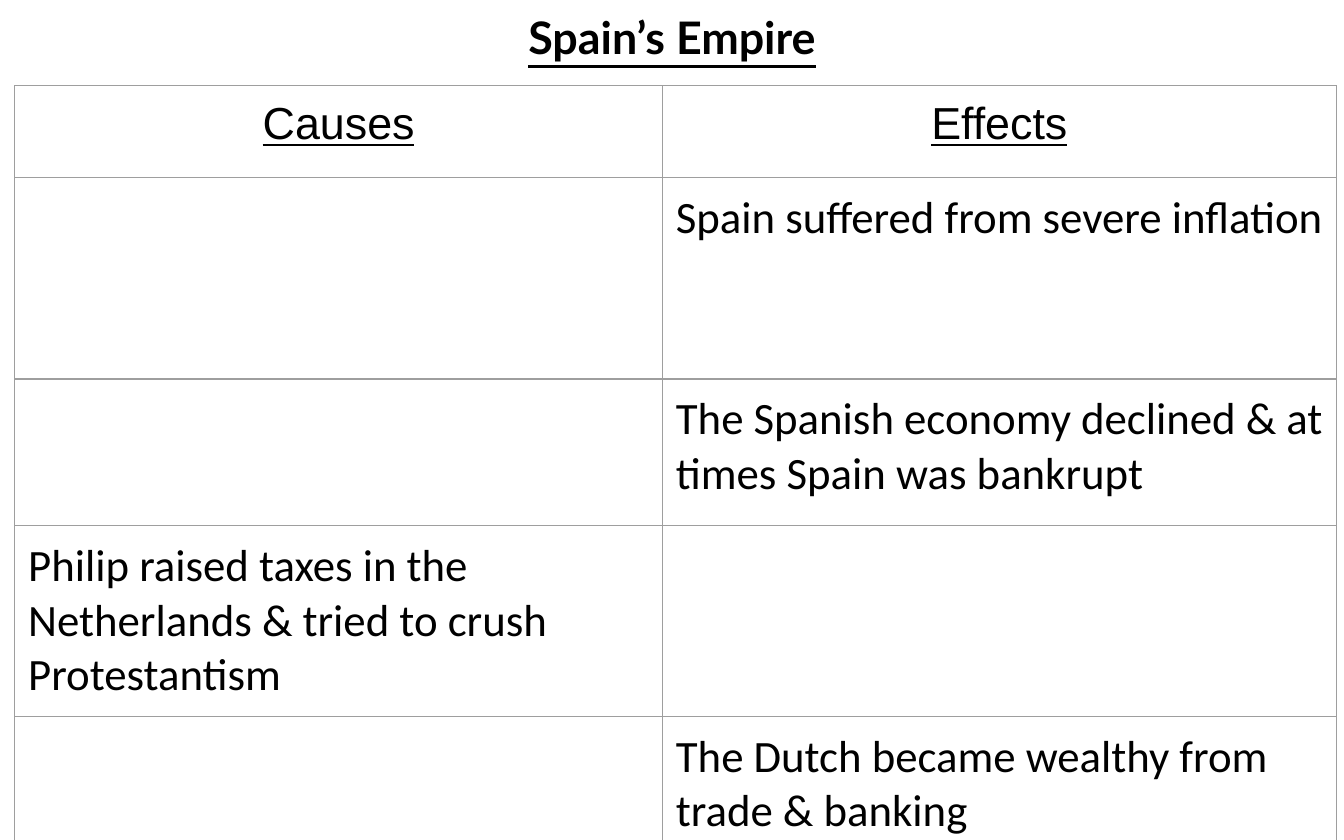
"""Build the cause and effect table slide about Spain's Empire."""
import pptx
import pptx.dml.color
import pptx.enum.text
import pptx.oxml
import pptx.oxml.ns
import pptx.util

Pt = pptx.util.Pt
CENTER = pptx.enum.text.PP_ALIGN.CENTER
LEFT = pptx.enum.text.PP_ALIGN.LEFT

TITLE = "Spain’s Empire"
ROWS = [
    ("Causes", "Effects"),
    ("", "Spain suffered from severe inflation"),
    ("", "The Spanish economy declined & at times Spain was bankrupt"),
    ("Philip raised taxes in the Netherlands & tried to crush Protestantism", ""),
    ("", "The Dutch became wealthy from trade & banking"),
]
COLUMN_WIDTHS = [347, 361]
ROW_HEIGHTS = [49, 108, 78.5, 78.5, 78.5]
TABLE_LEFT, TABLE_TOP = 7.9, 46
SLIDE_WIDTH, SLIDE_HEIGHT = 720, 450
MARGIN = 7.2
TEXT_COLOR = "000000"
BORDER_COLOR = "9E9E9E"
BORDER_WIDTH = 0.75


def rgb(color):
    """Return the colour for a hex string."""
    return pptx.dml.color.RGBColor.from_string(color)


def write(text_frame, text, font_name, alignment, bold=False, underline=False):
    """Fill a text frame with one formatted paragraph."""
    text_frame.text = text
    paragraph = text_frame.paragraphs[0]
    paragraph.alignment = alignment
    for run in paragraph.runs:
        run.font.name = font_name
        run.font.size = Pt(24)
        run.font.bold = bold
        run.font.underline = underline
        run.font.color.rgb = rgb(TEXT_COLOR)


def set_margins(target):
    """Give a cell or text frame equal margins."""
    for side in ("left", "right", "top", "bottom"):
        setattr(target, f"margin_{side}", Pt(MARGIN))


def add_borders(cell):
    """Draw a thin line on all four sides of a cell."""
    properties = cell._tc.get_or_add_tcPr()
    for position, side in enumerate(("lnL", "lnR", "lnT", "lnB")):
        line = pptx.oxml.parse_xml(
            f'<a:{side} {pptx.oxml.ns.nsdecls("a")} w="{Pt(BORDER_WIDTH)}">'
            f'<a:solidFill><a:srgbClr val="{BORDER_COLOR}"/></a:solidFill></a:{side}>'
        )
        properties.insert(position, line)


def add_table(slide):
    """Add the table of causes and effects."""
    shape = slide.shapes.add_table(
        len(ROWS), len(COLUMN_WIDTHS), Pt(TABLE_LEFT), Pt(TABLE_TOP),
        Pt(sum(COLUMN_WIDTHS)), Pt(sum(ROW_HEIGHTS)),
    )
    table = shape.table
    table.first_row = False
    table.horz_banding = False
    for column, width in zip(table.columns, COLUMN_WIDTHS):
        column.width = Pt(width)
    for row_index, (row, height, texts) in enumerate(zip(table.rows, ROW_HEIGHTS, ROWS)):
        row.height = Pt(height)
        header = row_index == 0
        for cell, text in zip(row.cells, texts):
            set_margins(cell)
            cell.fill.background()
            add_borders(cell)
            write(
                cell.text_frame, text, "Arial" if header else "Calibri",
                CENTER if header else LEFT, underline=header,
            )


def add_title(slide):
    """Add the slide title."""
    shape = slide.shapes.add_textbox(0, 0, Pt(SLIDE_WIDTH), Pt(39.6))
    text_frame = shape.text_frame
    text_frame.word_wrap = True
    text_frame.vertical_anchor = pptx.enum.text.MSO_ANCHOR.MIDDLE
    set_margins(text_frame)
    write(text_frame, TITLE, "Lato", CENTER, bold=True, underline=True)


def main():
    """Build and save the presentation."""
    presentation = pptx.Presentation()
    presentation.slide_width = Pt(SLIDE_WIDTH)
    presentation.slide_height = Pt(SLIDE_HEIGHT)
    slide = presentation.slides.add_slide(presentation.slide_layouts[6])
    add_table(slide)
    add_title(slide)
    presentation.save("out.pptx")


if __name__ == "__main__":
    main()
